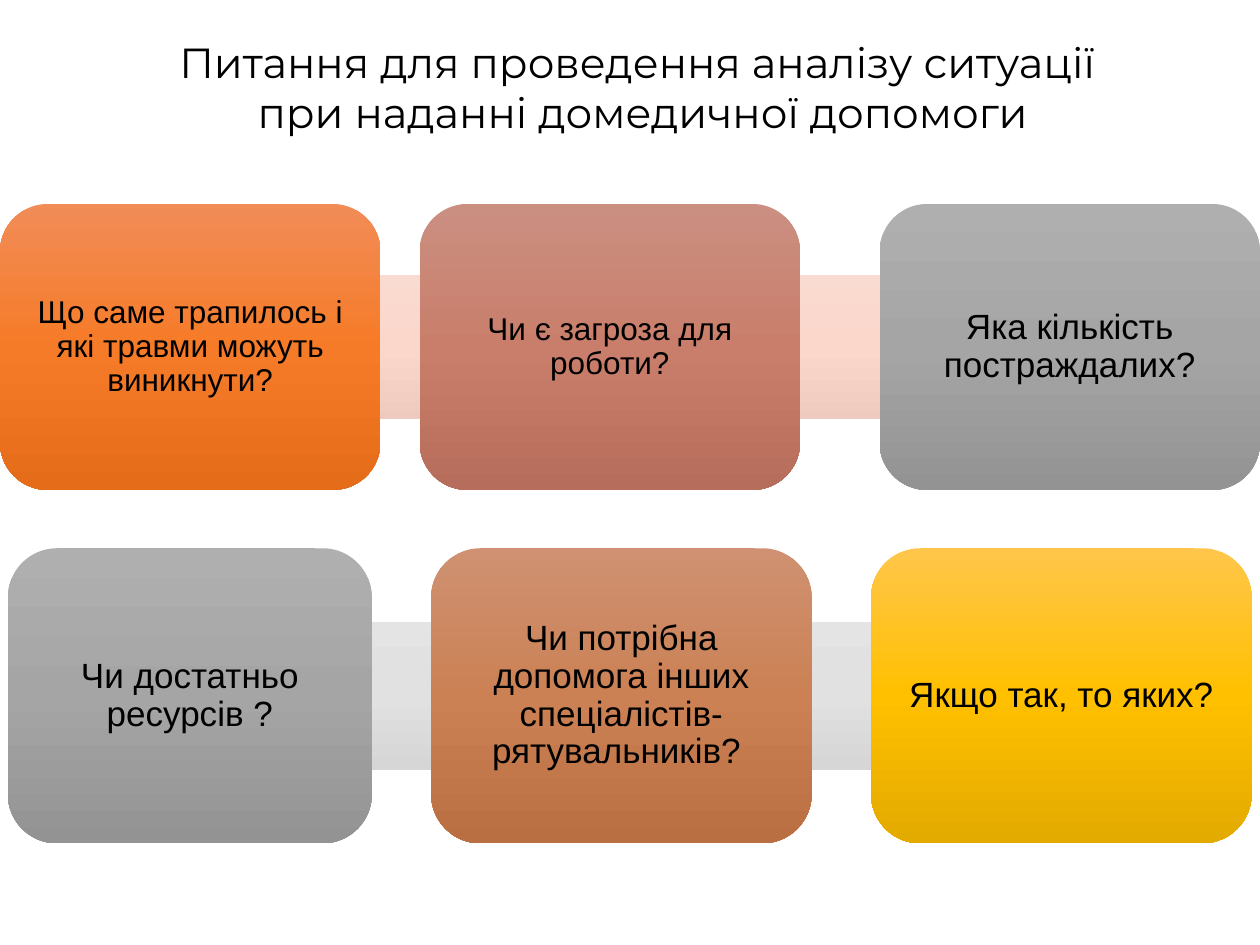
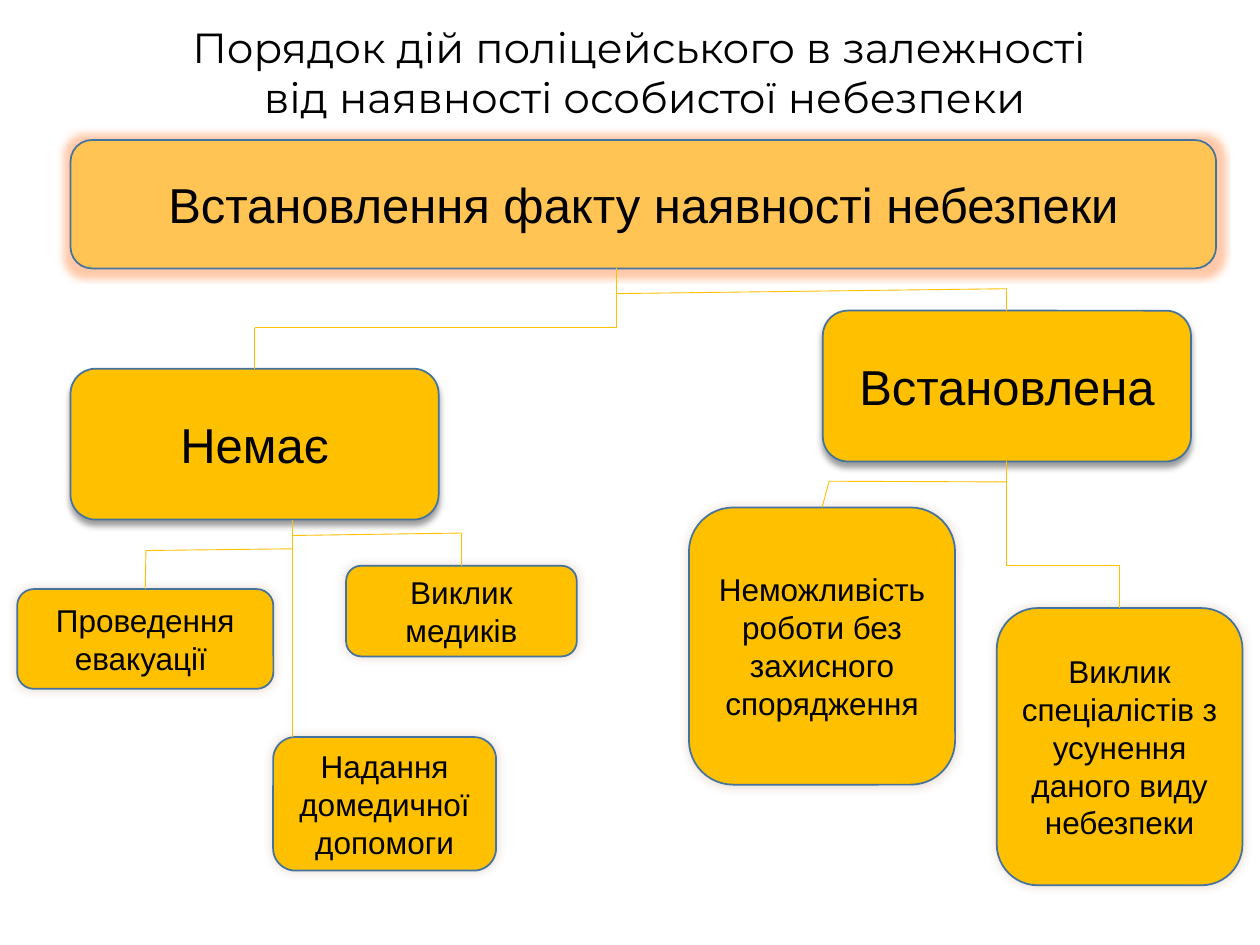
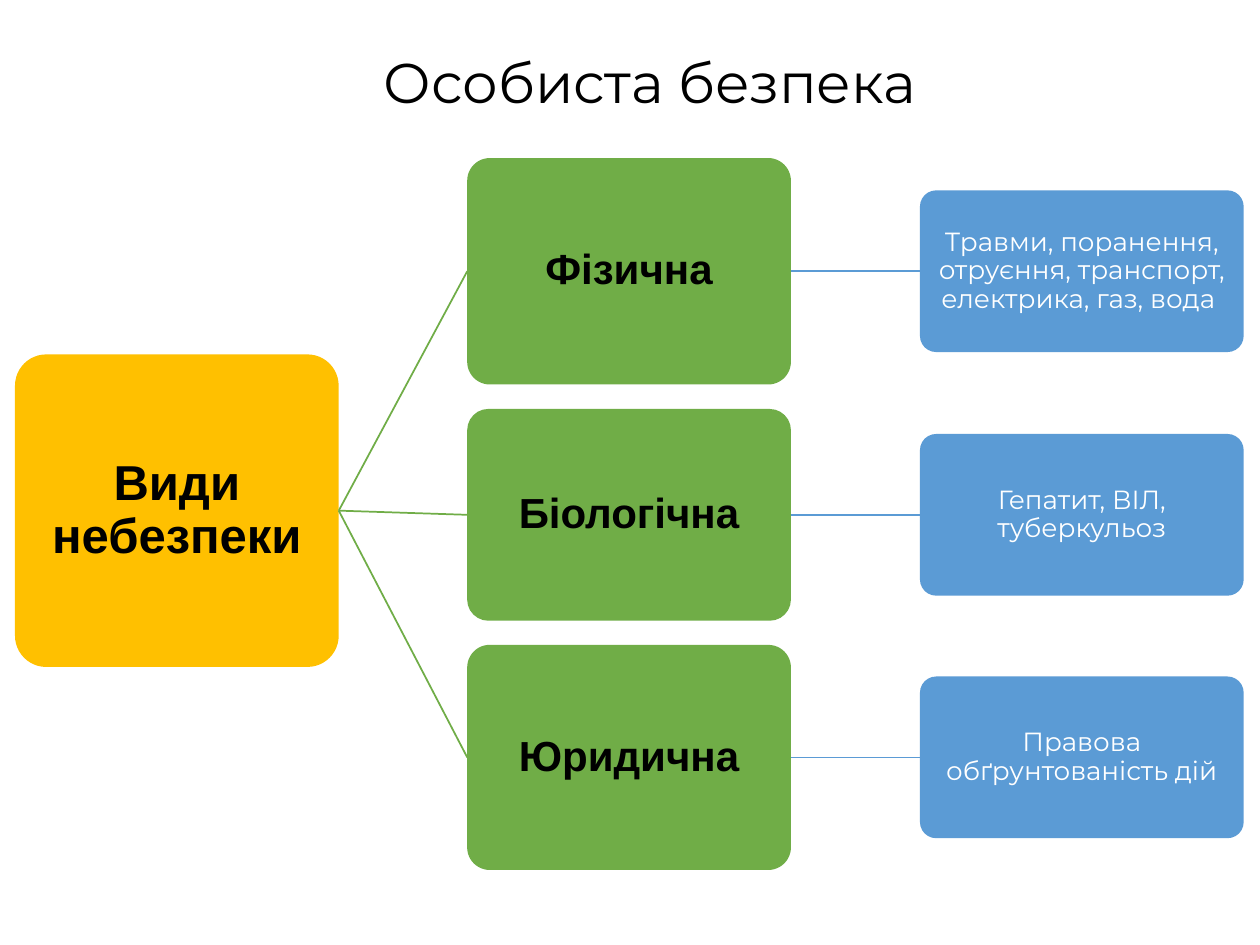
import pptx
import pptx.util
import pptx.dml.color
import pptx.enum.shapes
import pptx.enum.text
import pptx.oxml
import pptx.oxml.ns

Pt = pptx.util.Pt
KIND = pptx.enum.shapes.MSO_SHAPE
MID = pptx.enum.text.MSO_ANCHOR.MIDDLE
HUB = pptx.enum.text.PP_ALIGN.CENTER
NS = 'xmlns:a="http://schemas.openxmlformats.org/drawingml/2006/main"'

# Shared colours: flat ones, then three-stop gradients
INK = {
    "black": "000000", "white": "FFFFFF", "gold": "FFC000", "edge": "43739E",
    "green": "70AD47", "blue": "5B9BD5", "glow": "FF7828", "brown": "843C0B",
}
FADE = {
    "pink": ("FAE0D8", "FAD6CB", "E2BCB1"),
    "pale": ("E7E7E7", "E1E1E1", "C8C8C8"),
    "orange": ("F18C57", "F67B28", "E56C19"),
    "rose": ("CB8F81", "C97E6B", "B76D5B"),
    "grey": ("AFAFAF", "A5A5A5", "939393"),
    "clay": ("CF9172", "CB8154", "BA6F43"),
    "amber": ("FFC64B", "FFC000", "E3AA00"),
}

# Slide 1: rows of cards lying on an arrow
ASK = {
    "title": ["Питання для проведення аналізу ситуації ",
              "при наданні домедичної допомоги"],
    "place": (69.1, 17.3, 596.2, 65.5),
    "rows": [
        {"top": 116.6, "high": 163.4, "arrow": (0, 720, "pink"), "cards": [
            (0, 217.4, "orange", 18, "Що саме трапилось і які травми можуть виникнути?"),
            (239.8, 217.4, "rose", 18, "Чи є загроза для роботи?"),
            (502.6, 217.4, "grey", 20, "Яка кількість постраждалих?")]},
        {"top": 313.3, "high": 168.6, "arrow": (57.6, 604.8, "pale"), "cards": [
            (4.5, 208, "grey", 20, "Чи достатньо ресурсів ?"),
            (246.4, 217.4, "clay", 20,
             "Чи потрібна допомога інших спеціалістів-рятувальників? "),
            (497.8, 217.4, "amber", 20, "Якщо так, то яких?")]},
    ],
}

# Slide 2: boxes by name (place, size, effect, text) and the lines between them;
# a line point is either x, y or a box name with its side
ACT = {
    "title": ["Порядок дій поліцейського в залежності ",
              "від наявності особистої небезпеки"],
    "place": (76.3, 8.6, 583.9, 65.5),
    "boxes": {
        "fact": ((40.3, 80, 654.6, 73.4), 28, "glow", "Встановлення факту наявності небезпеки"),
        "none": ((40.3, 210.7, 210.4, 86.2), 28, "drop", "Немає"),
        "found": ((470.2, 177.5, 210.4, 86.2), 28, "drop", "Встановлена"),
        "medic": ((197.8, 323.3, 131.8, 51.8), 18, "soft", "Виклик медиків"),
        "aid": ((156.1, 421.2, 127.4, 76.3), 18, "soft", "Надання домедичної допомоги"),
        "leave": ((9.8, 336.6, 146.4, 57), 18, "soft", "Проведення евакуації "),
        "gear": ((393.7, 290, 152.1, 158.4), 18, "soft",
                 "Неможливість роботи без захисного спорядження"),
        "squad": ((569.6, 347.5, 140.4, 158.4), 18, "soft",
                  "Виклик спеціалістів з усунення даного виду небезпеки"),
    },
    "lines": [
        [(352, 153.4), (352, 167.8), (575.4, 165), ("found", 0)],
        [(352, 167.8), (352, 187.2), (145.5, 187.2), ("none", 0)],
        [(167.2, 296.9), (167.2, 314.5), (167.2, 421.2)],
        [(167.2, 306), (263.7, 304.6), ("medic", 0)],
        [(167.2, 313.6), (83.4, 314.6), ("leave", 0)],
        [("found", 2), (575.4, 323.2), (639.8, 323.2), ("squad", 0)],
        [(575.4, 275.4), (473.8, 275), ("gear", 0)],
    ],
}
CAST = {  # tag and attributes, colour, opacity in percent
    "glow": ('glow rad="101600"', "glow", 40),
    "drop": ('outerShdw blurRad="50800" dist="38100" dir="5400000"', "black", 40),
    "soft": ('outerShdw blurRad="76200" dir="13500000"', "brown", 20),
}

# Slide 3: a tree of one root, three branches and a leaf each
RISK = {
    "title": ["Особиста безпека"],
    "place": (196.6, 23.8, 349.9, 46),
    "root": "Види небезпеки",
    "arms": [  # middle, height, branch, leaf
        (155, 129.4, "Фізична", "Травми, поранення, отруєння, транспорт, електрика, газ, вода "),
        (294.2, 121, "Біологічна", "Гепатит, ВІЛ, туберкульоз"),
        (432.8, 128.6, "Юридична", "Правова обґрунтованість дій"),
    ],
    "cols": (8.6, 267, 525.7), "wide": 185, "tall": 178.6, "low": 92.4, "mid": 291.8,
}


def hue(name):
    return pptx.dml.color.RGBColor.from_string(INK[name])


def node(xml):
    return pptx.oxml.parse_xml(xml)


def stop(code, tail=""):
    return f'<a:srgbClr val="{code}">{tail}</a:srgbClr>'


def write(frame, lines, size, font="Arial", ink="black", bold=False, space=None):
    frame.text = "\n".join(lines)
    for par in frame.paragraphs:
        par.alignment = HUB
        par.line_spacing = space
        for run in par.runs:
            run.font.size, run.font.name, run.font.bold = Pt(size), font, bold
            run.font.color.rgb = hue(ink)


def start(deck, page, size):
    slide = deck.slides.add_slide(deck.slide_layouts[6])
    box = slide.shapes.add_textbox(*map(Pt, page["place"]))
    box.text_frame.word_wrap = False
    box.text_frame.auto_size = pptx.enum.text.MSO_AUTO_SIZE.SHAPE_TO_FIT_TEXT
    write(box.text_frame, page["title"], size, "Montserrat")
    return slide


def block(slide, place, fill, kind=KIND.ROUNDED_RECTANGLE, inset=None):
    shape = slide.shapes.add_shape(kind, *map(Pt, place))
    shape.shadow.inherit = False
    shape.line.fill.background()
    if fill in FADE:
        shape.fill.gradient()
        shape.fill.gradient_angle = 270
        stops = shape._element.spPr.find(".//" + pptx.oxml.ns.qn("a:gsLst"))
        for old in list(stops):
            stops.remove(old)
        for i, code in enumerate(FADE[fill]):
            stops.append(node(f'<a:gs {NS} pos="{i * 50000}">{stop(code)}</a:gs>'))
    else:
        shape.fill.solid()
        shape.fill.fore_color.rgb = hue(fill)
    frame = shape.text_frame
    frame.word_wrap, frame.vertical_anchor = True, MID
    if inset is not None:
        frame.margin_left = frame.margin_right = Pt(inset)
        frame.margin_top = frame.margin_bottom = Pt(inset)
    return shape


def link(slide, head, tail, ink, width, boxes):
    """Draw a line; an end is x, y or a box name with its side."""
    ends = [(0, 0) if p[0] in boxes else p for p in (head, tail)]
    line = slide.shapes.add_connector(
        pptx.enum.shapes.MSO_CONNECTOR.STRAIGHT, *map(Pt, ends[0] + ends[1]))
    for p, join in ((head, line.begin_connect), (tail, line.end_connect)):
        if p[0] in boxes:
            join(boxes[p[0]], p[1])
    line.line.color.rgb, line.line.width = hue(ink), Pt(width)
    line._element.spPr.append(node(f"<a:effectLst {NS}/>"))


def cards(deck):
    slide = start(deck, ASK, 24)
    for row in ASK["rows"]:
        top, high = row["top"], row["high"]
        left, wide, fill = row["arrow"]
        block(slide, (left, top, wide, high), fill, KIND.RIGHT_ARROW)
        for left, wide, fill, size, text in row["cards"]:
            card = block(slide, (left, top, wide, high), fill, inset=size * 0.28)
            write(card.text_frame, [text], size, space=0.9)


def chart(deck):
    slide = start(deck, ACT, 24)
    boxes = {}
    for name, (place, size, cast, text) in ACT["boxes"].items():
        box = boxes[name] = block(slide, place, "gold")
        box.line.color.rgb, box.line.width = hue("edge"), Pt(1)
        write(box.text_frame, [text], size)
        tag, ink, part = CAST[cast]
        tint = stop(INK[ink], f'<a:alpha val="{part * 1000}"/>')
        effect = box._element.spPr.find(pptx.oxml.ns.qn("a:effectLst"))
        effect.append(node(f"<a:{tag} {NS}>{tint}</a:{tag.split()[0]}>"))
    # The top box is half clear
    clear = boxes["fact"]._element.spPr.find(
        pptx.oxml.ns.qn("a:solidFill") + "/" + pptx.oxml.ns.qn("a:srgbClr"))
    clear.append(node(f'<a:alpha {NS} val="50000"/>'))
    for chain in ACT["lines"]:
        for head, tail in zip(chain, chain[1:]):
            link(slide, head, tail, "gold", 0.5, boxes)


def tree(deck):
    slide = start(deck, RISK, 32)
    wide = RISK["wide"]

    def cell(col, mid, high, fill, text, size, inset=1.3, **look):
        place = (RISK["cols"][col], mid - high / 2, wide, high)
        box = block(slide, place, fill, inset=inset)
        box.adjustments[0] = 0.1
        write(box.text_frame, [text], size, space=0.9, **look)
        return box

    root = cell(0, RISK["mid"], RISK["tall"], "gold", RISK["root"], 28, bold=True)
    for mid, high, name, text in RISK["arms"]:
        arm = cell(1, mid, high, "green", name, 24, bold=True)
        leaf = cell(2, mid, RISK["low"], "blue", text, 15, 0.8,
                    font="Montserrat", ink="white")
        boxes = {"root": root, "arm": arm, "leaf": leaf}
        link(slide, ("root", 3), ("arm", 1), "green", 1, boxes)
        link(slide, ("arm", 3), ("leaf", 1), "blue", 1, boxes)


def main():
    deck = pptx.Presentation()
    deck.slide_width, deck.slide_height = Pt(720), Pt(540)
    for make in (cards, chart, tree):
        make(deck)
    deck.save("out.pptx")


if __name__ == "__main__":
    main()
